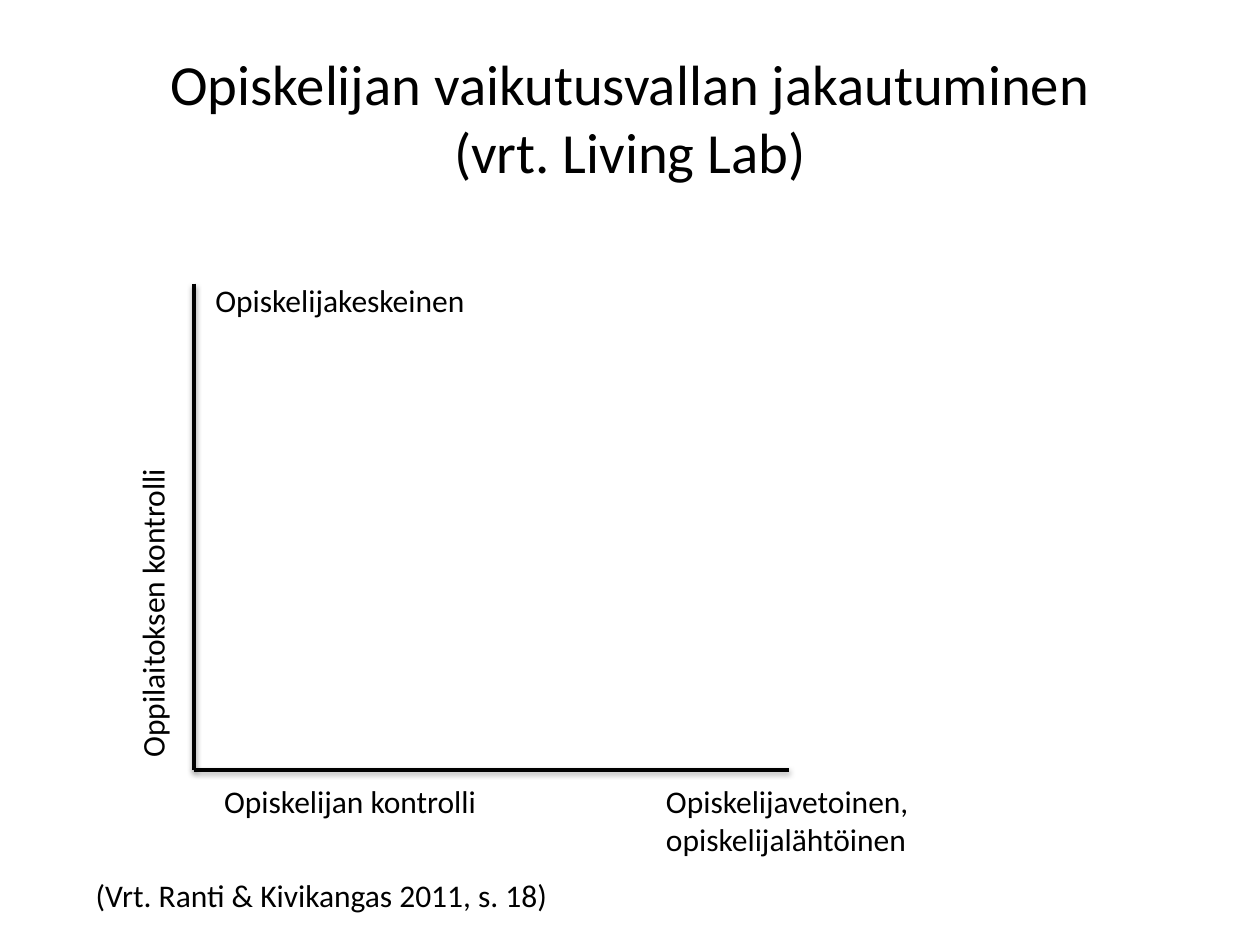
from dataclasses import dataclass

from lxml import etree
from pptx import Presentation
from pptx.dml.color import RGBColor
from pptx.enum.shapes import MSO_CONNECTOR
from pptx.enum.text import MSO_ANCHOR, PP_ALIGN
from pptx.oxml.ns import qn
from pptx.util import Pt

STRAIGHT = MSO_CONNECTOR.STRAIGHT
TOP, MIDDLE = MSO_ANCHOR.TOP, MSO_ANCHOR.MIDDLE
LEFT, CENTER = PP_ALIGN.LEFT, PP_ALIGN.CENTER


@dataclass(frozen=True)
class Theme:
    font: str = "Calibri"
    ink: str = "000000"
    title_size: float = 32.4
    label_size: float = 18
    axis_width: float = 2
    shadow_opacity: int = 38
    shadow_blur: float = 3.1
    shadow_distance: float = 1.6


def write_text(frame, text, *, theme, size, align=LEFT, anchor=TOP, wrap=False):
    """Fill a frame; a newline starts a paragraph, a vertical tab breaks a line."""
    frame.text = text
    frame.word_wrap = wrap
    frame.vertical_anchor = anchor
    for paragraph in frame.paragraphs:
        paragraph.alignment = align
        for run in paragraph.runs:
            run.font.name = theme.font
            run.font.size = Pt(size)
            run.font.color.rgb = RGBColor.from_string(theme.ink)


class SlideBuilder:
    def __init__(self, slide, theme):
        self.slide = slide
        self.theme = theme

    def text(self, text, left, top, width, height, *, rotation=0, size=None, **style):
        box = self.slide.shapes.add_textbox(Pt(left), Pt(top), Pt(width), Pt(height))
        box.rotation = rotation
        write_text(box.text_frame, text, theme=self.theme,
                   size=size or self.theme.label_size, **style)

    def axis(self, start, end):
        line = self.slide.shapes.add_connector(STRAIGHT, *map(Pt, start + end))
        line.line.color.rgb = RGBColor.from_string(self.theme.ink)
        line.line.width = Pt(self.theme.axis_width)
        self.drop_shadow(line)

    def drop_shadow(self, line):
        """Cast a soft shadow straight down."""
        theme = self.theme
        effects = etree.SubElement(line._element.spPr, qn("a:effectLst"))
        shadow = etree.SubElement(
            effects, qn("a:outerShdw"),
            blurRad=str(Pt(theme.shadow_blur)), dist=str(Pt(theme.shadow_distance)),
            dir=str(90 * 60000), rotWithShape="0")
        color = etree.SubElement(shadow, qn("a:srgbClr"), val=theme.ink)
        etree.SubElement(color, qn("a:alpha"), val=str(theme.shadow_opacity * 1000))


def main():
    theme = Theme()
    deck = Presentation()
    deck.slide_width, deck.slide_height = Pt(720), Pt(540)
    builder = SlideBuilder(deck.slides.add_slide(deck.slide_layouts[6]), theme)

    builder.text("Opiskelijan vaikutusvallan jakautuminen\v(vrt. Living Lab)",
                 36, 21.6, 648, 90, size=theme.title_size,
                 align=CENTER, anchor=MIDDLE, wrap=True)

    origin = (110.8, 440)
    axis_top, axis_right = 162, 451
    builder.axis((origin[0], axis_top), origin)
    builder.axis(origin, (axis_right, origin[1]))

    label_height = 29
    below_axis = origin[1] + 3.5
    builder.text("Opiskelijavetoinen,\nopiskelijalähtöinen",
                 373.5, below_axis, 155, 51)
    builder.text("Opiskelijakeskeinen", 116, 157, 158.5, label_height)
    builder.text("Opiskelijan kontrolli", 121, below_axis, 160, label_height)

    # The turned label starts at the origin and reads upwards.
    label_length, label_center = 272, 87
    builder.text("Oppilaitoksen kontrolli", label_center - label_length / 2,
                 origin[1] - (label_length + label_height) / 2,
                 label_length, label_height, rotation=270, wrap=True)

    builder.text("(Vrt. Ranti & Kivikangas 2011, s. 18)",
                 47.5, 497, 276, label_height)
    deck.save("out.pptx")


if __name__ == "__main__":
    main()
